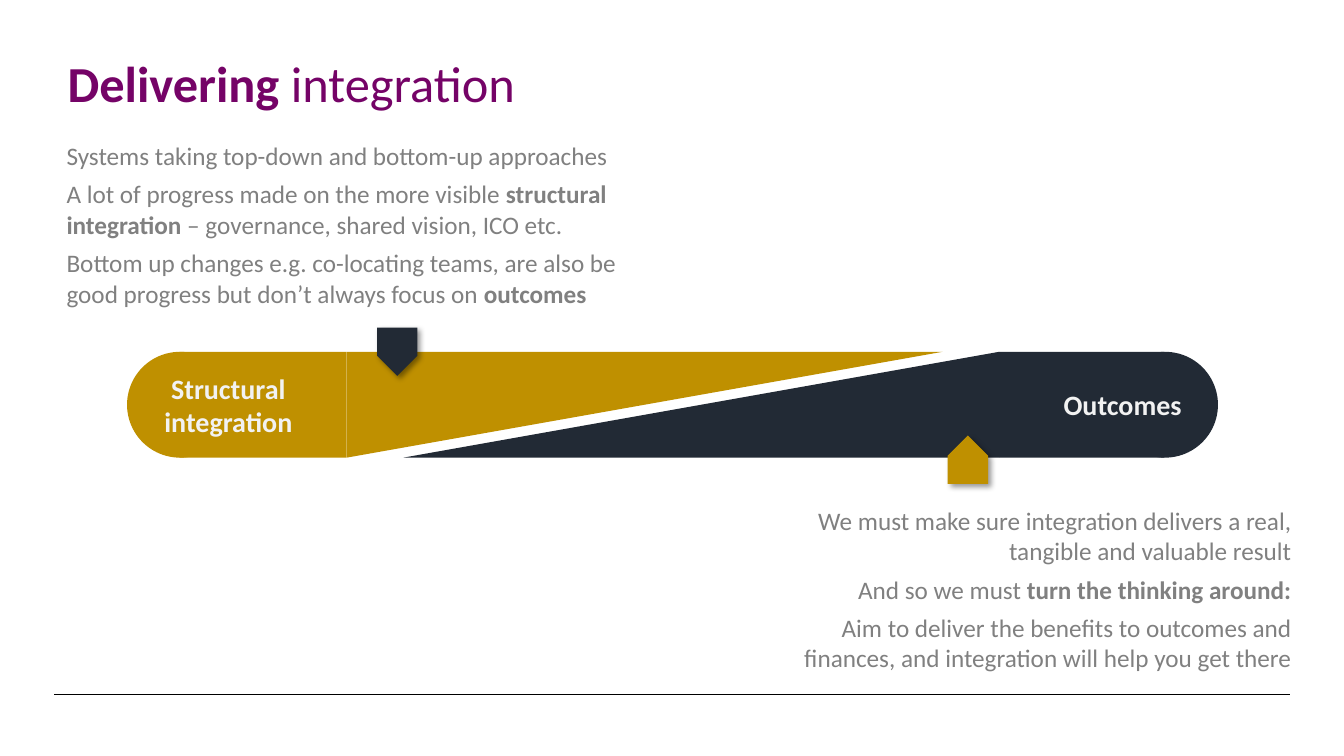
from lxml import etree
from pptx import Presentation
from pptx.dml.color import RGBColor
from pptx.enum.shapes import MSO_CONNECTOR, MSO_SHAPE
from pptx.enum.text import MSO_ANCHOR, PP_ALIGN
from pptx.oxml import parse_xml
from pptx.oxml.ns import nsdecls, qn
from pptx.util import Inches, Pt

LEFT, CENTER, RIGHT = PP_ALIGN.LEFT, PP_ALIGN.CENTER, PP_ALIGN.RIGHT
TOP, MIDDLE = MSO_ANCHOR.TOP, MSO_ANCHOR.MIDDLE
OVAL, RECTANGLE = MSO_SHAPE.OVAL, MSO_SHAPE.RECTANGLE
TRIANGLE, MARKER = MSO_SHAPE.RIGHT_TRIANGLE, MSO_SHAPE.PENTAGON
STRAIGHT = MSO_CONNECTOR.STRAIGHT

GOLD, NAVY = "BF9000", "222A35"
PURPLE, GREY, PALE, BLACK = "750367", "808080", "F2F2F2", "000000"

BAR_TOP, BAR_HEIGHT = 3.49, 1.05
SLOPE_WIDTH = 5.91
LABEL_WIDTH, LABEL_HEIGHT = 1.45, 0.9
MARKER_LENGTH, MARKER_WIDTH = 0.48, 0.4

APPROACHES = [
    [("Systems taking top-down and bottom-up approaches", False)],
    [("A lot of progress made on the more visible ", False),
     ("structural integration ", True),
     ("– governance, shared vision, ICO etc.", False)],
    [("Bottom up changes e.g. co-locating teams, are also be good progress "
      "but don’t always focus on ", False),
     ("outcomes", True)],
]
RESULTS = [
    [("We must make sure integration delivers a real, tangible and valuable result", False)],
    [("And so we must ", False), ("turn the thinking around:", True)],
    [("Aim to deliver the benefits to outcomes and finances, "
      "and integration will help you get there", False)],
]


def color(value):
    return RGBColor.from_string(value)


class SlideBuilder:
    font = "Calibri"

    def __init__(self, page):
        self.page = page

    def fill_text(self, box, paragraphs, size, ink, align=LEFT, anchor=TOP, after=0):
        """Write paragraphs given as lists of (text, bold) spans."""
        frame = box.text_frame
        frame.word_wrap = True
        frame.vertical_anchor = anchor
        frame.margin_left = frame.margin_right = frame.margin_top = frame.margin_bottom = 0
        for index, spans in enumerate(paragraphs):
            para = frame.add_paragraph() if index else frame.paragraphs[0]
            para.alignment = align
            para.space_before, para.space_after = Pt(0), Pt(after)
            for text, bold in spans:
                span = para.add_run()
                span.text = text
                span.font.name, span.font.size = self.font, Pt(size)
                span.font.bold = bold
                span.font.color.rgb = color(ink)

    def title(self, spans, left, top, width, height):
        box = self.page.shapes.title
        box.left, box.top = Inches(left), Inches(top)
        box.width, box.height = Inches(width), Inches(height)
        self.fill_text(box, [spans], 36, PURPLE)

    def text(self, paragraphs, left, top, width, height, **style):
        box = self.page.shapes.add_textbox(
            Inches(left), Inches(top), Inches(width), Inches(height))
        self.fill_text(box, paragraphs, **style)

    def label(self, text, left):
        top = BAR_TOP + (BAR_HEIGHT - LABEL_HEIGHT) / 2
        self.text([[(text, True)]], left, top, LABEL_WIDTH, LABEL_HEIGHT,
                  size=20, ink=PALE, align=CENTER, anchor=MIDDLE)

    def shape(self, kind, left, top, width, height, fill):
        shape = self.page.shapes.add_shape(
            kind, Inches(left), Inches(top), Inches(width), Inches(height))
        shape.shadow.inherit = False
        shape.fill.solid()
        shape.fill.fore_color.rgb = color(fill)
        shape.line.fill.background()
        return shape

    def bar_half(self, fill, cap, slope, block, block_width, flip):
        """Draw one half of the bar: round cap, sloping wedge and block between."""
        self.shape(OVAL, cap, BAR_TOP, BAR_HEIGHT, BAR_HEIGHT, fill)
        wedge = self.shape(TRIANGLE, slope, BAR_TOP, SLOPE_WIDTH, BAR_HEIGHT, fill)
        wedge._element.spPr.find(qn("a:xfrm")).set(flip, "1")
        self.shape(RECTANGLE, block, BAR_TOP, block_width, BAR_HEIGHT, fill)

    def marker(self, left, top, rotation, fill):
        marker = self.shape(MARKER, left, top, MARKER_LENGTH, MARKER_WIDTH, fill)
        marker.rotation = rotation
        effects = marker._element.spPr.find(qn("a:effectLst"))
        effects.append(parse_xml(
            f'<a:outerShdw {nsdecls("a")} blurRad="{Pt(4)}" dist="{Pt(3)}" '
            f'dir="2700000" algn="tl" rotWithShape="0"><a:srgbClr val="{BLACK}">'
            '<a:alpha val="40000"/></a:srgbClr></a:outerShdw>'))

    def rule(self, left, right, top):
        line = self.page.shapes.add_connector(
            STRAIGHT, Inches(left), Inches(top), Inches(right), Inches(top))
        line.line.color.rgb = color(BLACK)
        line.line.width = Pt(0.25)
        etree.SubElement(line._element.spPr, qn("a:effectLst"))


def main():
    deck = Presentation()
    deck.slide_width, deck.slide_height = Inches(13.33), Inches(7.5)
    slide = SlideBuilder(deck.slides.add_slide(deck.slide_layouts[5]))

    slide.rule(0.54, 12.79, 6.89)
    slide.title([("Delivering", True), (" integration", False)], 0.67, 0.52, 5.07, 0.88)
    slide.text(APPROACHES, 0.66, 1.39, 6.01, 1.24, size=18, ink=GREY, after=6)

    slide.bar_half(GOLD, cap=1.26, slope=3.44, block=1.78, block_width=1.66, flip="flipV")
    slide.bar_half(NAVY, cap=11.03, slope=4, block=9.91, block_width=1.64, flip="flipH")
    slide.marker(3.7, 3.29, 90, NAVY)
    slide.marker(9.36, 4.36, 270, GOLD)
    slide.label("Structural integration", 1.54)
    slide.label("Outcomes", 10.41)

    slide.text(RESULTS, 7.71, 5.01, 5.1, 1.24, size=18, ink=GREY, align=RIGHT, after=6)
    deck.save("out.pptx")


if __name__ == "__main__":
    main()
